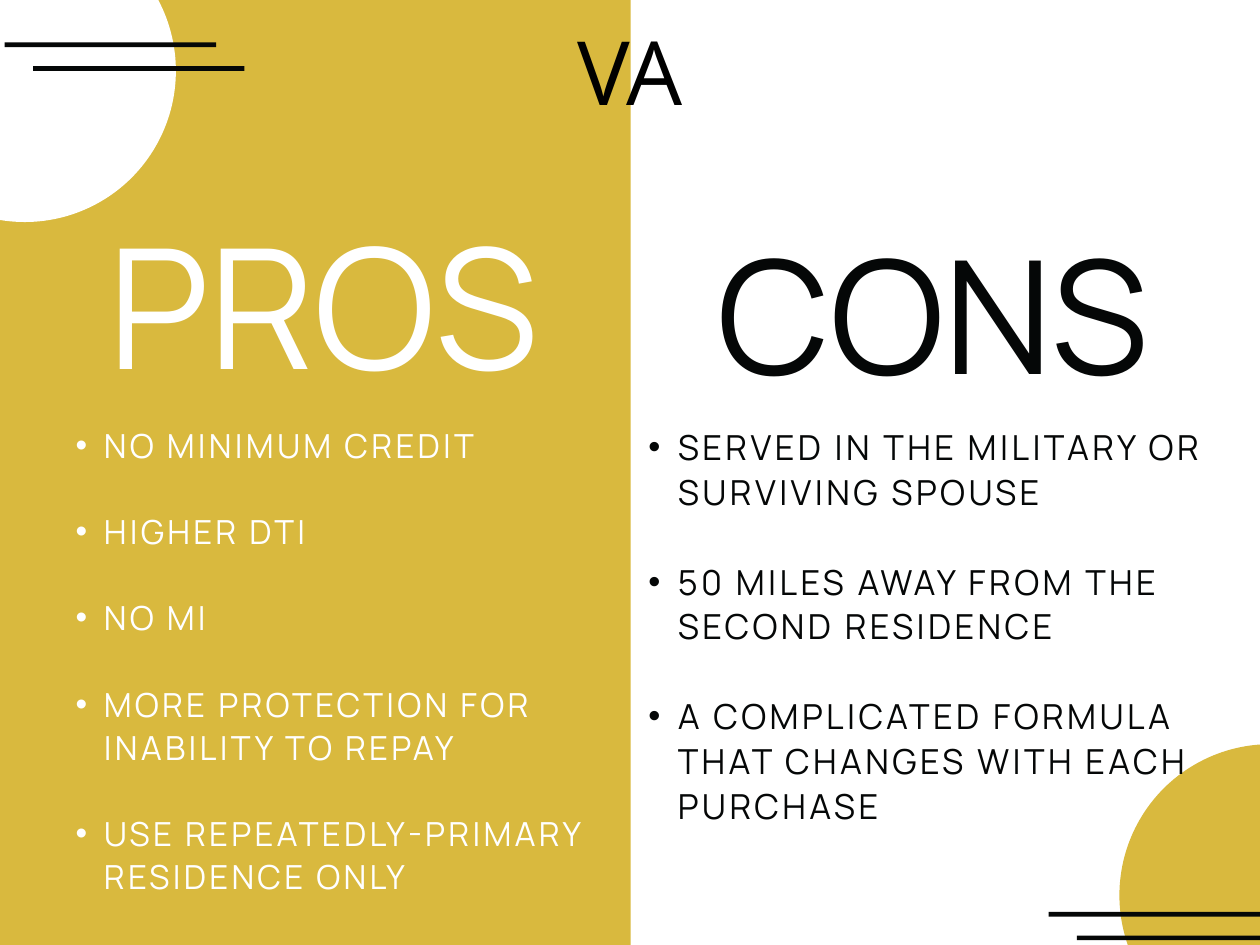
import pptx
import pptx.util
import pptx.dml.color
import pptx.enum.shapes
import pptx.enum.text
import lxml.etree

Inches = pptx.util.Inches
Pt = pptx.util.Pt
SHAPE = pptx.enum.shapes.MSO_SHAPE
ALIGN = pptx.enum.text.PP_ALIGN

COLORS = {"gold": "D9B93E", "white": "FFFFFF", "ink": "050707", "black": "000000"}

PROS = [
    "NO MINIMUM CREDIT",
    "HIGHER DTI",
    "NO MI",
    "MORE PROTECTION FOR INABILITY TO REPAY",
    "USE REPEATEDLY-PRIMARY RESIDENCE ONLY",
]
CONS = [
    "SERVED IN THE MILITARY OR SURVIVING SPOUSE",
    "50 MILES AWAY FROM THE SECOND RESIDENCE",
    "A COMPLICATED FORMULA THAT CHANGES WITH EACH PURCHASE",
]


def rgb(color):
    return pptx.dml.color.RGBColor.from_string(COLORS[color])


def add_form(slide, kind, box, color):
    form = slide.shapes.add_shape(kind, *map(Inches, box))
    form.shadow.inherit = False
    form.fill.solid()
    form.fill.fore_color.rgb = rgb(color)
    form.line.fill.background()


def add_frame(slide, box):
    frame = slide.shapes.add_textbox(*map(Inches, box)).text_frame
    margins = dict.fromkeys(
        ["margin_left", "margin_top", "margin_right", "margin_bottom"], 0)
    for name, value in {"word_wrap": True, **margins}.items():
        setattr(frame, name, value)
    return frame


def add_run(para, text, font, size, color):
    run = para.add_run()
    run.text = text
    for name, value in {"name": font, "size": Pt(size)}.items():
        setattr(run.font, name, value)
    run.font.color.rgb = rgb(color)
    return run


def add_title(slide, box, text, font, size, color):
    para = add_frame(slide, box).paragraphs[0]
    para.alignment = ALIGN.CENTER
    para.line_spacing = Pt(round(size * 1.1, 1))
    add_run(para, text, font, size, color)


def add_list(slide, box, items, size, color, indent):
    """Bulleted list with one line of space between the items."""
    frame = add_frame(slide, box)
    lead = Pt(round(size * 1.3, 1))
    for i, item in enumerate(items):
        para = frame.paragraphs[0] if i == 0 else frame.add_paragraph()
        para.level = 1
        para.line_spacing = lead
        para.space_before = lead if i else 0
        props = para._p.get_or_add_pPr()
        props.set("marL", str(Inches(2 * indent)))
        props.set("indent", str(-Inches(indent)))
        for tag, key, value in [("buFont", "typeface", "Arial"), ("buChar", "char", "•")]:
            mark = lxml.etree.SubElement(props, pptx.oxml.ns.qn("a:" + tag))
            mark.set(key, value)
        run = add_run(para, item, "Manrope", size, color)
        run._r.get_or_add_rPr().set("spc", str(round(size * 10)))


def add_corner(slide, box, color, dx, dy):
    """Disc with two staggered bars, the first at dx, dy from the box."""
    left, top, _, _ = box
    add_form(slide, SHAPE.OVAL, box, color)
    for i in range(2):
        bar = (left + dx + 0.24 * i, top + dy + 0.2 * i, 1.79, 0.04)
        add_form(slide, SHAPE.RECTANGLE, bar, "ink")


def add_side(slide, box, head, items, sizes, color, drop, indent):
    """Heading with its list, the list starting at drop below the box top."""
    left, top, width, height = box
    add_title(slide, (left, top, width, drop), head, "Manrope", sizes[0], color)
    add_list(slide, (left, top + drop, width, height - drop),
             items, sizes[1], color, indent)


def main():
    deck = pptx.Presentation()
    deck.slide_width, deck.slide_height = Inches(10.67), Inches(8)
    slide = deck.slides.add_slide(deck.slide_layouts[6])

    add_form(slide, SHAPE.RECTANGLE, (0, 0, 5.34, 8), "gold")
    add_corner(slide, (9.48, 6.3, 2.56, 2.56), "gold", -0.6, 1.42)
    add_corner(slide, (-1.07, -0.68, 2.56, 2.56), "white", 1.11, 1.04)
    add_side(slide, (0.4, 1.85, 4.68, 6.15), "PROS", PROS,
             (101.9, 20.2), "white", 1.72, 0.24)
    add_side(slide, (5.24, 1.97, 5.33, 6.03), "CONS", CONS,
             (96, 21), "ink", 1.61, 0.25)
    add_title(slide, (4.73, 0.22, 1.21, 0.87), "VA", "Open Sans", 54, "black")
    deck.save("out.pptx")


if __name__ == "__main__":
    main()
